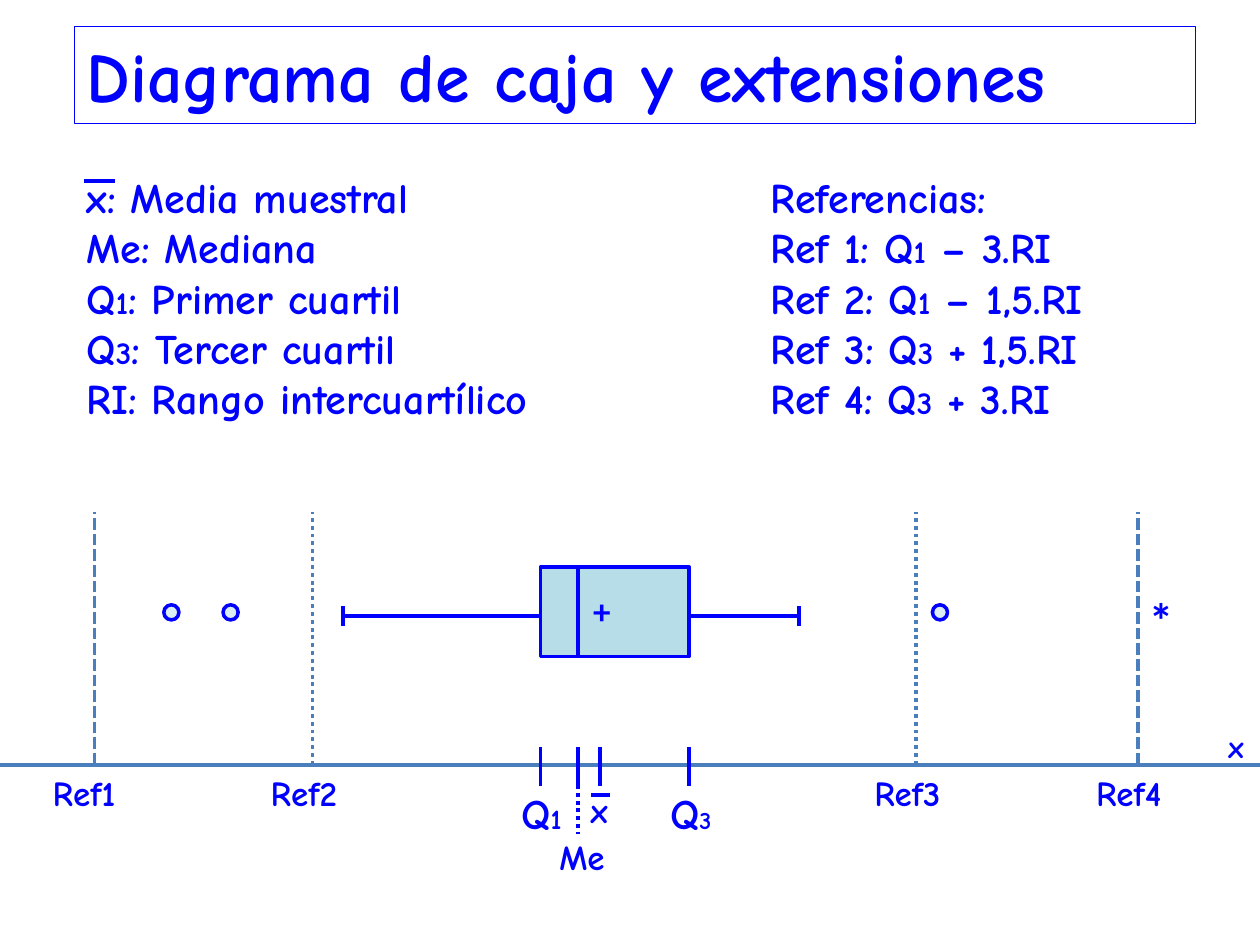
from collections import namedtuple

from lxml import etree
from pptx import Presentation
from pptx import util as u
from pptx.dml.color import RGBColor
from pptx.enum import dml, shapes, text
from pptx.oxml import ns

PX = 9144
BLUE = RGBColor(0x00, 0x00, 0xFF)
STEEL = RGBColor(0x4B, 0x7E, 0xBC)
PALE = RGBColor(0xDB, 0xEE, 0xF4)
AQUA = RGBColor(0xB7, 0xDE, 0xE8)
DASH = dml.MSO_LINE.SQUARE_DOT
DOT = dml.MSO_LINE.ROUND_DOT

Box = namedtuple("Box", "left top width height")

REFERENCES = [("Ref1", 75, DASH), ("Ref2", 248, DOT), ("Ref3", 727, DOT), ("Ref4", 903, DASH)]
Q1, MEDIAN, MEAN, Q3 = 429, 459, 476, 547
WHISKERS = [(272, Q1), (634, Q3)]
OUTLIERS = [136, 183, 746]
DEFINITIONS = ["x: Media muestral", "Me: Mediana", "Q_1: Primer cuartil",
               "Q_3: Tercer cuartil", "RI: Rango intercuartílico"]
FORMULAS = ["Referencias:", "Ref 1: Q_1 – 3.RI", "Ref 2: Q_1 – 1,5.RI",
            "Ref 3: Q_3 + 1,5.RI", "Ref 4: Q_3 + 3.RI"]


def px(*lengths):
    """Turn px lengths into EMU."""
    return [u.Emu(length * PX) for length in lengths]


def add_text(slide, box, lines, size=20, small=18, font="Comic Neue"):
    """Write lines of bold text; the character after an underscore is small."""
    shape = slide.shapes.add_textbox(*px(*box))
    frame = shape.text_frame
    frame.word_wrap = True
    for index, line in enumerate(lines):
        paragraph = frame.paragraphs[0] if index == 0 else frame.add_paragraph()
        before, _, after = line.partition("_")
        for words, points in [(before, size), (after[:1], small), (after[1:], size)]:
            if words:
                run = paragraph.add_run()
                run.text = words
                run.font.name = font
                run.font.size = u.Pt(points)
                run.font.bold = True
                run.font.color.rgb = BLUE
    return shape


def add_line(slide, start, end, color=BLUE, dash=None):
    """Draw a straight line between two points."""
    line = slide.shapes.add_connector(shapes.MSO_CONNECTOR.STRAIGHT, *px(*start, *end))
    line.line.color.rgb = color
    line.line.width = u.Pt(2.25)
    if dash:
        line.line.dash_style = dash
    etree.SubElement(line._element.spPr, ns.qn("a:effectLst"))


def add_filled(slide, kind, box, fill):
    """Draw a filled shape with a blue outline."""
    shape = slide.shapes.add_shape(kind, *px(*box))
    shape.shadow.inherit = False
    shape.fill.solid()
    shape.fill.fore_color.rgb = fill
    shape.line.color.rgb = BLUE
    shape.line.width = u.Pt(2)


def add_title(slide, box):
    """Write the framed title."""
    shape = add_text(slide, box, ["Diagrama de caja y extensiones"], size=40)
    shape.text_frame.vertical_anchor = text.MSO_ANCHOR.TOP
    shape.line.color.rgb = BLUE
    shape.line.width = u.Pt(0.75)


def add_definitions(slide, box):
    """List the symbols, with a bar over the mean."""
    add_text(slide, box, DEFINITIONS, size=24)
    add_line(slide, (box.left + 8, box.top + 13), (box.left + 32, box.top + 13))


def add_axis(slide, box):
    """Draw the axis with its reference lines, ticks and labels."""
    left, top, width, height = box
    base = top + height
    add_line(slide, (left, base), (left + width, base), STEEL)
    add_text(slide, (left + width - 35, base - 35, 35, 40), ["x"], size=18)
    for name, x, dash in REFERENCES:
        add_line(slide, (left + x, base), (left + x, top), STEEL, dash)
        add_text(slide, (left + x - 43, base, 85, 44), [name])
    for x in (Q1, MEDIAN, MEAN, Q3):
        add_line(slide, (left + x, base - 14), (left + x, base + 17))
    for name, x, small in [("Q_1", Q1, 16), ("Q_3", Q3, 14)]:
        add_text(slide, (left + x - 25, base + 13, 63, 50), [name], size=24, small=small)
    add_line(slide, (left + MEDIAN, base + 16), (left + MEDIAN, base + 55), dash=DOT)
    add_text(slide, (left + MEDIAN - 25, base + 51, 61, 44), ["Me"])
    add_text(slide, (left + MEAN - 17, base + 14, 37, 44), ["x"])
    add_line(slide, (left + MEAN - 7, base + 24), (left + MEAN + 8, base + 24))


def add_box_plot(slide, box):
    """Draw the box, whiskers, mean and outliers."""
    left, top, _, height = box
    middle = top + 39
    add_filled(slide, shapes.MSO_SHAPE.RECTANGLE, (left + Q1, top, Q3 - Q1, height), AQUA)
    add_line(slide, (left + MEDIAN, top), (left + MEDIAN, top + height))
    add_text(slide, (left + MEAN - 15, top + 13, 34, 44), ["+"], font="Calibri")
    for end, edge in WHISKERS:
        add_line(slide, (left + end, middle), (left + edge, middle))
        add_line(slide, (left + end, middle - 8), (left + end, middle + 8))
    for x in OUTLIERS:
        add_filled(slide, shapes.MSO_SHAPE.OVAL, (left + x - 6, top + 30, 12, 12), PALE)
    add_text(slide, (left + 902, top + 13, 40, 57), ["*"], size=28, font="Calibri")


def main():
    """Build and save the slide."""
    presentation = Presentation()
    presentation.slide_width, presentation.slide_height = px(1000, 750)
    slide = presentation.slides.add_slide(presentation.slide_layouts[6])
    add_title(slide, Box(59, 21, 890, 77))
    add_definitions(slide, Box(59, 131, 424, 212))
    add_text(slide, Box(602, 131, 346, 212), FORMULAS, size=24)
    add_axis(slide, Box(0, 406, 1000, 201))
    add_box_plot(slide, Box(0, 450, 1000, 71))
    presentation.save("out.pptx")


if __name__ == "__main__":
    main()
